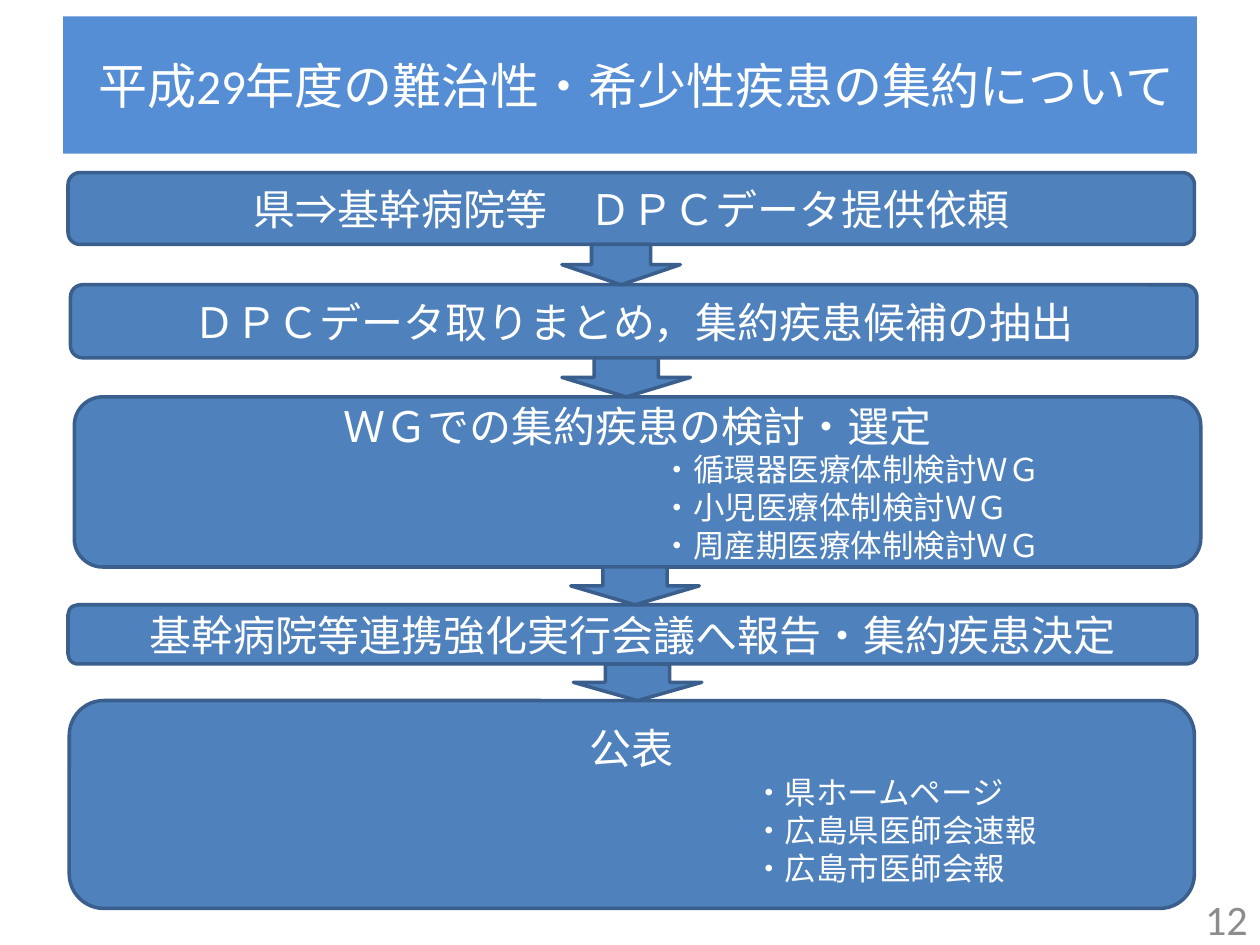
from pptx import Presentation
from pptx.dml.color import RGBColor
from pptx.enum.shapes import MSO_SHAPE
from pptx.enum.text import MSO_ANCHOR, MSO_AUTO_SIZE, PP_ALIGN
from pptx.util import Inches, Pt

deck = Presentation()
deck.slide_width, deck.slide_height = Inches(10), Inches(7.5)
page = deck.slides.add_slide(deck.slide_layouts[5])
column = deck.slide_width / 100
row = deck.slide_height / 75


def color(value):
    return RGBColor.from_string(value)


def write(para, text, size=24, ink="FFFFFF", align=PP_ALIGN.CENTER, indent=0):
    para.alignment = align
    if indent:
        para._p.get_or_add_pPr().set("marL", str(int(indent * column)))
    span = para.add_run()
    span.text = text
    span.font.name = "Calibri"
    span.font.size = Pt(size)
    span.font.color.rgb = color(ink)


title = page.shapes.title
title.left, title.top = int(5 * column), int(1.3 * row)
title.width, title.height = int(90 * column), int(10.9 * row)
title.fill.solid()
title.fill.fore_color.rgb = color("558ED5")
title.text_frame.margin_left = Inches(0.2)
title.text_frame.auto_size = MSO_AUTO_SIZE.NONE
title.text_frame.vertical_anchor = MSO_ANCHOR.MIDDLE
write(title.text_frame.paragraphs[0], "平成29年度の難治性・希少性疾患の集約について", size=28)

steps = [
    (5.4, 13.7, 89.4, 5.7, "県⇒基幹病院等　ＤＰＣデータ提供依頼", 0, []),
    (5.6, 22.6, 89.4, 5.8, "ＤＰＣデータ取りまとめ，集約疾患候補の抽出", 0, []),
    (5.9, 31.5, 89.4, 13.5, "ＷＧでの集約疾患の検討・選定", 45,
     ["・循環器医療体制検討ＷＧ", "・小児医療体制検討ＷＧ", "・周産期医療体制検討ＷＧ"]),
    (5.4, 48, 89.6, 4.7, "基幹病院等連携強化実行会議へ報告・集約疾患決定", 0, []),
    (5.5, 55.6, 89.3, 16.5, "公表", 52.5,
     ["・県ホームページ", "・広島県医師会速報", "・広島市医師会報"]),
]
arrows = [(44.6, 9.4), (44.6, 10.2), (45.3, 10.2), (45.5, 10.2)]

outlines = [(MSO_SHAPE.ROUNDED_RECTANGLE, *step) for step in steps]
for (left, width), above, below in zip(arrows, steps, steps[1:]):
    top = above[1] + above[3]
    outlines.append((MSO_SHAPE.DOWN_ARROW, left, top, width, below[1] - top, "", 0, []))

for kind, left, top, width, height, heading, indent, items in outlines:
    box = page.shapes.add_shape(
        kind, int(left * column), int(top * row), int(width * column), int(height * row))
    box.shadow.inherit = False
    box.fill.solid()
    box.fill.fore_color.rgb = color("4F81BD")
    box.line.color.rgb = color("3A5F8C")
    box.line.width = Pt(2)
    frame = box.text_frame
    frame.vertical_anchor = MSO_ANCHOR.MIDDLE
    if heading:
        write(frame.paragraphs[0], heading)
    for item in items:
        write(frame.add_paragraph(), item, size=18, align=PP_ALIGN.JUSTIFY, indent=indent)

number = page.shapes.add_textbox(
    int(76.7 * column), int(70.9 * row), int(23.3 * column), int(4 * row))
number.text_frame.word_wrap = True
number.text_frame.vertical_anchor = MSO_ANCHOR.MIDDLE
write(number.text_frame.paragraphs[0], "12", ink="8C8C8C", align=PP_ALIGN.RIGHT)

deck.save("out.pptx")
